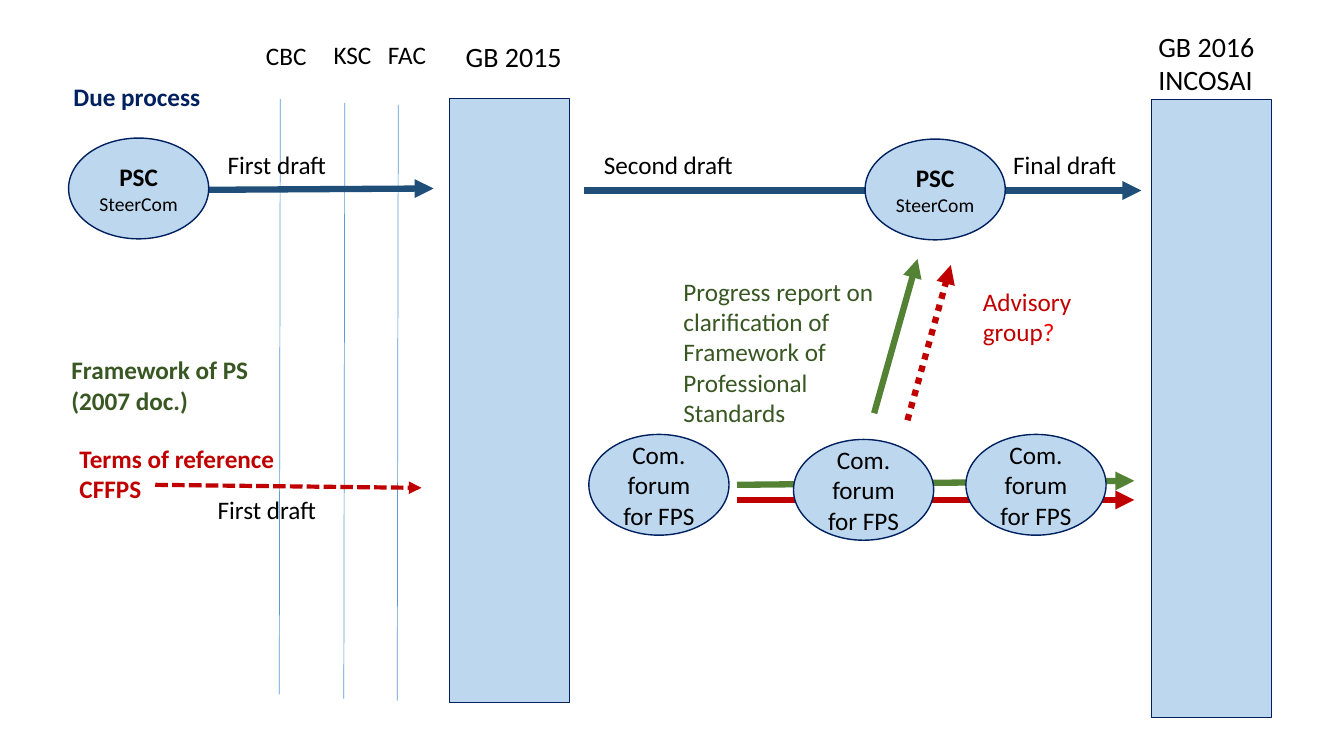
from dataclasses import dataclass
from typing import NamedTuple

from lxml import etree
from pptx import Presentation
from pptx.dml.color import RGBColor
from pptx.enum.dml import MSO_LINE
from pptx.enum.shapes import MSO_CONNECTOR, MSO_SHAPE
from pptx.enum.text import MSO_ANCHOR, MSO_AUTO_SIZE, PP_ALIGN
from pptx.oxml.ns import qn
from pptx.util import Inches, Pt

STRAIGHT = MSO_CONNECTOR.STRAIGHT
OVAL, RECTANGLE = MSO_SHAPE.OVAL, MSO_SHAPE.RECTANGLE
MIDDLE = MSO_ANCHOR.MIDDLE
FIT_TEXT = MSO_AUTO_SIZE.SHAPE_TO_FIT_TEXT
CENTER = PP_ALIGN.CENTER
DASHED, DOTTED = MSO_LINE.SQUARE_DOT, MSO_LINE.ROUND_DOT


@dataclass(frozen=True)
class Theme:
    font: str = "Calibri"
    black: str = "000000"
    navy: str = "002060"
    process: str = "1F4E79"
    meeting: str = "5B9BD5"
    pale: str = "BDD7EE"
    green: str = "548235"
    dark_green: str = "385723"
    red: str = "C00000"
    bright_red: str = "FF0000"
    heading: int = 20
    body: int = 18
    small: int = 14
    thick: float = 4.5
    medium: float = 3
    outline: float = 1
    hairline: float = 0.5


class Box(NamedTuple):
    left: float
    top: float
    width: float
    height: float

    def inner(self, left, top, width, height):
        return Box(self.left + left, self.top + top, width, height)

    def point(self, x, y):
        return self.left + x, self.top + y

    def lengths(self):
        return [Inches(value) for value in self]


THEME = Theme()
OVAL_SIZE = (1.39, 1)


def style_font(font, color=THEME.black, size=THEME.body, bold=False):
    font.name = THEME.font
    font.size = Pt(size)
    font.bold = bold
    font.color.rgb = RGBColor.from_string(color)


def add_text(slide, box, lines, color=THEME.black, size=THEME.body, bold=False, wrap=True):
    text_box = slide.shapes.add_textbox(*box.lengths())
    frame = text_box.text_frame
    frame.word_wrap = wrap
    frame.auto_size = FIT_TEXT
    for index, line in enumerate(lines):
        paragraph = frame.add_paragraph() if index else frame.paragraphs[0]
        paragraph.text = line
        style_font(paragraph.font, color, size, bold)
    return text_box


def add_line(slide, start, end, color, width, dash=None, arrow=True):
    connector = slide.shapes.add_connector(STRAIGHT, *map(Inches, start + end))
    line = connector.line
    line.color.rgb = RGBColor.from_string(color)
    line.width = Pt(width)
    if dash:
        line.dash_style = dash
    properties = connector._element.spPr
    if arrow:
        outline = properties.find(qn("a:ln"))
        etree.SubElement(outline, qn("a:tailEnd"), type="triangle")
    etree.SubElement(properties, qn("a:effectLst"))


def add_panel(slide, kind, box):
    shape = slide.shapes.add_shape(kind, *box.lengths())
    shape.shadow.inherit = False
    shape.fill.solid()
    shape.fill.fore_color.rgb = RGBColor.from_string(THEME.pale)
    shape.line.color.rgb = RGBColor.from_string(THEME.navy)
    shape.line.width = Pt(THEME.outline)
    return shape


def add_group_oval(slide, box, name, detail=None):
    frame = add_panel(slide, OVAL, box).text_frame
    frame.word_wrap = True
    frame.vertical_anchor = MIDDLE
    paragraph = frame.paragraphs[0]
    paragraph.alignment = CENTER
    run = paragraph.add_run()
    run.text = name
    style_font(run.font, bold=detail is not None)
    if detail:
        run = paragraph.add_run()
        run.text = detail
        style_font(run.font, size=THEME.small)


def add_board_pillar(slide, box, lines, label_left, label_top):
    add_panel(slide, RECTANGLE, box)
    label = box.inner(label_left, label_top, 1.16, 0.4 * len(lines))
    add_text(slide, label, lines, size=THEME.heading, wrap=False)


def add_meetings(slide, box):
    meetings = (("CBC", 0, 0.01, 0.24, 0.64), ("KSC", 0.67, 0, 0.88, 0.68),
                ("FAC", 1.21, 0, 1.41, 0.7))
    for name, label_left, label_top, line_left, line_top in meetings:
        add_line(slide, box.point(line_left, line_top),
                 box.point(line_left - 0.01, line_top + 5.91),
                 THEME.meeting, THEME.hairline, arrow=False)
        add_text(slide, box.inner(label_left, label_top, 0.73, 0.4), [name])


def add_due_process(slide, box):
    add_line(slide, box.point(0.32, 1.13), box.point(3.67, 1.11), THEME.process, THEME.thick)
    add_line(slide, box.point(5.16, 1.13), box.point(10.69, 1.13), THEME.process, THEME.thick)
    for left, top in ((0.05, 0.61), (7.95, 0.62)):
        add_group_oval(slide, box.inner(left, top, *OVAL_SIZE), "PSC ", "SteerCom")
    add_text(slide, box.inner(0, 0, 2.18, 0.4), ["Due process"], THEME.navy, bold=True)
    for name, left in (("First draft", 1.53), ("Second draft", 5.26), ("Final draft", 9.32)):
        add_text(slide, box.inner(left, 0.67, 1.97, 0.4), [name])


def add_framework_start(slide, box):
    add_line(slide, box.point(0.93, 1.34), box.point(3.57, 1.37),
             THEME.red, THEME.medium, DASHED)
    add_text(slide, box.inner(0, 0, 3.1, 0.71), ["Framework of PS\n(2007 doc.)"],
             THEME.dark_green, bold=True)
    add_text(slide, box.inner(0.08, 0.88, 2.84, 0.71), ["Terms of reference", "CFFPS"],
             THEME.red, bold=True)
    add_text(slide, box.inner(1.45, 1.39, 1.97, 0.4), ["First draft"])


def add_forum(slide, box):
    add_line(slide, box.point(1.47, 2.24), box.point(5.41, 2.2), THEME.green, THEME.thick)
    add_line(slide, box.point(1.47, 2.39), box.point(5.41, 2.39), THEME.red, THEME.thick)
    for left, top in ((0, 1.74), (2.03, 1.79), (3.74, 1.74)):
        add_group_oval(slide, box.inner(left, top, *OVAL_SIZE), "Com. forum for FPS")
    add_line(slide, box.point(2.83, 1.53), box.point(3.26, 0), THEME.green, THEME.thick)
    add_line(slide, box.point(3.16, 1.6), box.point(3.59, 0.06),
             THEME.red, THEME.thick, DOTTED)
    add_text(slide, box.inner(0.84, 0.12, 2.18, 1.62),
             ["Progress report on clarification of Framework of Professional Standards"],
             THEME.dark_green)
    advisory = add_text(slide, box.inner(3.81, 0.22, 1.14, 0.71),
                        ["Advisory group"], THEME.red)
    question = advisory.text_frame.paragraphs[0].add_run()
    question.text = "?"
    question.font.color.rgb = RGBColor.from_string(THEME.bright_red)


def main():
    presentation = Presentation()
    presentation.slide_width = Inches(13.33)
    presentation.slide_height = Inches(7.5)
    slide = presentation.slides.add_slide(presentation.slide_layouts[6])
    add_meetings(slide, Box(2.54, 0.34, 1.94, 6.61))
    add_due_process(slide, Box(0.63, 0.76, 10.69, 1.62))
    add_board_pillar(slide, Box(4.46, 0.98, 1.19, 5.99), ["GB 2015"], 0.06, -0.64)
    add_board_pillar(slide, Box(11.42, 0.99, 1.19, 6.13), ["GB 2016", "INCOSAI"], -0.03, -0.75)
    add_framework_start(slide, Box(0.61, 3.47, 3.57, 1.79))
    add_forum(slide, Box(5.84, 2.57, 5.41, 2.79))
    presentation.save("out.pptx")


if __name__ == "__main__":
    main()
